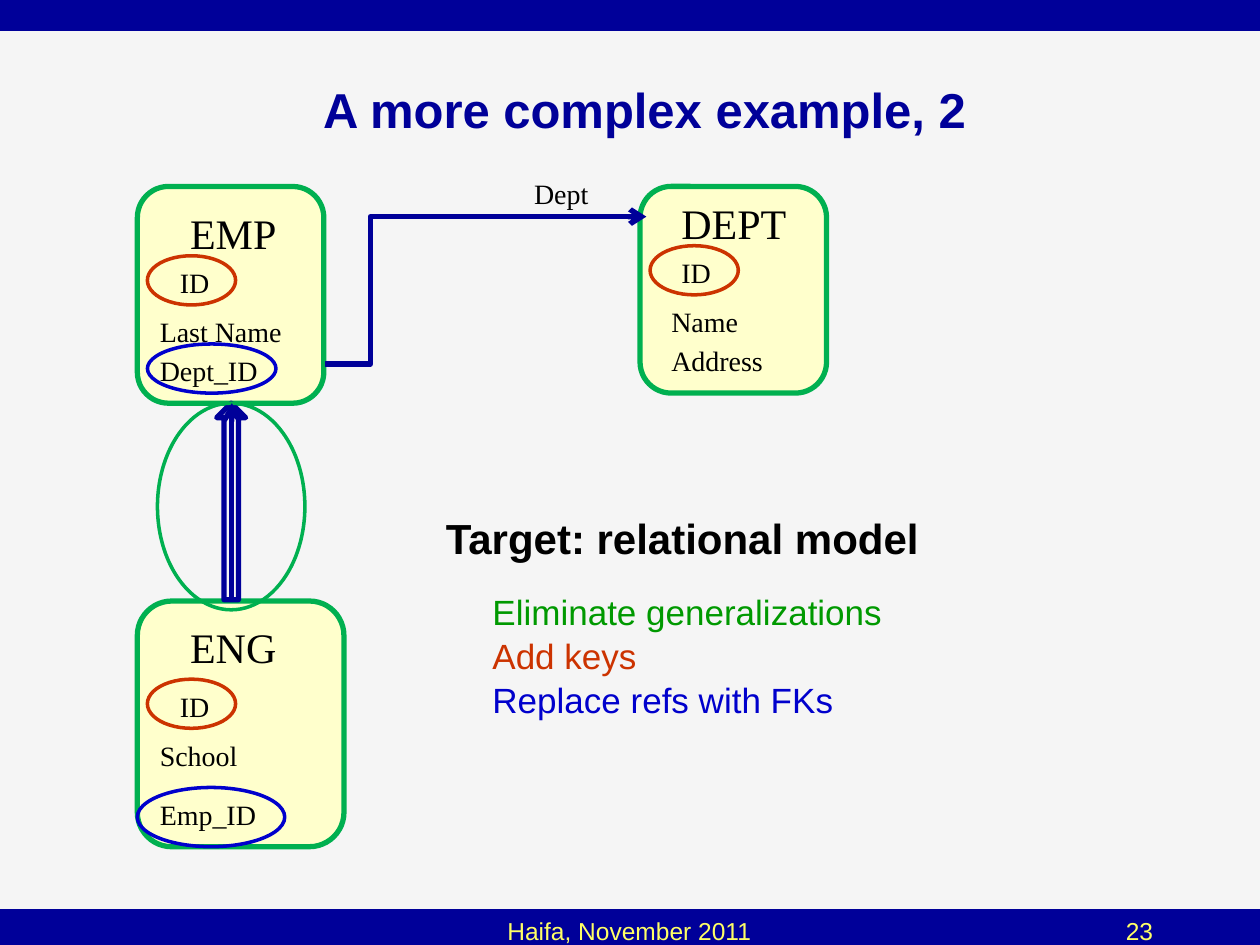
"""Build the slide that maps an EMP, DEPT and ENG schema to a relational model."""
from pptx import Presentation
from pptx import util as u
from pptx.dml.color import RGBColor
from pptx.enum import shapes, text
from pptx.oxml import parse_xml
from pptx.oxml.ns import nsdecls

NAVY, GREEN, RED, BLUE, CREAM = "000099", "00B050", "CC3300", "0000CC", "FFFFCC"
SERIF = "Times New Roman"
SHAPE, ALIGN = shapes.MSO_SHAPE, text.PP_ALIGN

presentation = Presentation()
presentation.slide_width, presentation.slide_height = u.Inches(10), u.Inches(7.5)
slide = presentation.slides.add_slide(presentation.slide_layouts[6])
slide.background.fill.solid()
slide.background.fill.fore_color.rgb = RGBColor.from_string("F5F5F5")


def add_text(content, box, size=16, font="Arial", color="000000", bold=False,
             align=ALIGN.LEFT, anchor=text.MSO_ANCHOR.TOP, wrap=True):
    frame = slide.shapes.add_textbox(*map(u.Inches, box)).text_frame
    frame.word_wrap, frame.vertical_anchor = wrap, anchor
    paragraph = frame.paragraphs[0]
    paragraph.text, paragraph.alignment = content, align
    paragraph.font.size, paragraph.font.name = u.Pt(size), font
    paragraph.font.bold = bold
    paragraph.font.color.rgb = RGBColor.from_string(color)
    return frame


def add_outline(kind, box, line, width, fill=None):
    shape = slide.shapes.add_shape(kind, *map(u.Inches, box))
    shape.shadow.inherit = False
    if fill:
        shape.fill.solid()
        shape.fill.fore_color.rgb = RGBColor.from_string(fill)
    else:
        shape.fill.background()
    shape.line.color.rgb = RGBColor.from_string(line)
    shape.line.width = u.Pt(width)


for top, height in [(0, 0.24), (7.22, 0.28)]:
    add_outline(SHAPE.RECTANGLE, (0, top, 10, height), NAVY, 0.75, NAVY)

for box in [(5.08, 1.48, 1.48, 1.64), (1.09, 1.48, 1.48, 1.72), (1.09, 4.77, 1.64, 1.95)]:
    add_outline(SHAPE.ROUNDED_RECTANGLE, box, GREEN, 3, CREAM)

add_text("Haifa, November 2011", (2.16, 7.22, 5.67, 0.5), size=14, color="FFFF66",
         align=ALIGN.CENTER)
add_text("23", (7.91, 7.22, 1.34, 0.5), size=14, color="FFFF66", align=ALIGN.RIGHT)
add_text("A more complex example, 2", (0.43, 0.28, 9.37, 1.17), size=28, color=NAVY,
         bold=True, align=ALIGN.CENTER, anchor=text.MSO_ANCHOR.MIDDLE)

for name, left, top, width in [("ENG", 1.41, 4.88, 0.89), ("EMP", 1.41, 1.6, 0.89),
                               ("DEPT", 5.31, 1.52, 1.04)]:
    add_text(name, (left, top, width, 0.5), size=24, font=SERIF, wrap=False)

for label, left, top, width in [
    ("Dept", 4.14, 1.35, 0.64),
    ("ID", 1.33, 2.06, 0.44), ("Last Name", 1.17, 2.45, 1.18), ("Dept_ID", 1.17, 2.76, 1.25),
    ("ID", 5.31, 1.98, 0.44), ("Name", 5.23, 2.37, 0.74), ("Address", 5.23, 2.68, 0.94),
    ("ID", 1.33, 5.42, 0.47), ("School", 1.17, 5.81, 0.83), ("Emp_ID", 1.17, 6.28, 0.98),
]:
    add_text(label, (left, top, width, 0.37), font=SERIF, wrap=False)

add_outline(SHAPE.UP_ARROW, (1.72, 3.2, 0.23, 1.56), NAVY, 3)
for box, color in [
    ((1.25, 3.2, 1.17, 1.64), GREEN),
    ((1.17, 2.03, 0.7, 0.39), RED), ((5.16, 1.95, 0.7, 0.39), RED),
    ((1.17, 5.39, 0.7, 0.39), RED),
    ((1.17, 2.73, 1.02, 0.39), BLUE), ((1.09, 6.25, 1.17, 0.47), BLUE),
]:
    add_outline(SHAPE.OVAL, box, color, 2)

for kind, ends in [(shapes.MSO_CONNECTOR.ELBOW, (2.58, 2.89, 5.13, 1.72)),
                   (shapes.MSO_CONNECTOR.STRAIGHT, (1.84, 4.77, 1.84, 3.2))]:
    connector = slide.shapes.add_connector(kind, *map(u.Inches, ends))
    connector.line.color.rgb = RGBColor.from_string(NAVY)
    connector.line.width = u.Pt(3)
    properties = connector._element.spPr
    properties.find(".//{*}ln").append(parse_xml(f'<a:tailEnd {nsdecls("a")} type="arrow"/>'))
    properties.append(parse_xml(f'<a:effectLst {nsdecls("a")}/>'))
    if kind == shapes.MSO_CONNECTOR.ELBOW:
        properties.find(".//{*}avLst").append(
            parse_xml(f'<a:gd {nsdecls("a")} name="adj1" fmla="val 14100"/>'))

add_text("Target: relational model", (3.44, 4.02, 4.53, 0.5), size=24, bold=True)
steps = add_text("Eliminate generalizations", (3.52, 4.64, 5, 1.11), size=20, color="009900")
for step, color in [("Add keys", RED), ("Replace refs with FKs", BLUE)]:
    paragraph = steps.add_paragraph()
    paragraph.text, paragraph.space_before = step, u.Pt(1)
    paragraph.font.size, paragraph.font.name = u.Pt(20), "Arial"
    paragraph.font.color.rgb = RGBColor.from_string(color)
for paragraph in steps.paragraphs:
    paragraph._p.get_or_add_pPr().set("marL", str(u.Inches(0.58)))
    paragraph._p.pPr.set("indent", str(u.Inches(-0.29)))

presentation.save("out.pptx")
